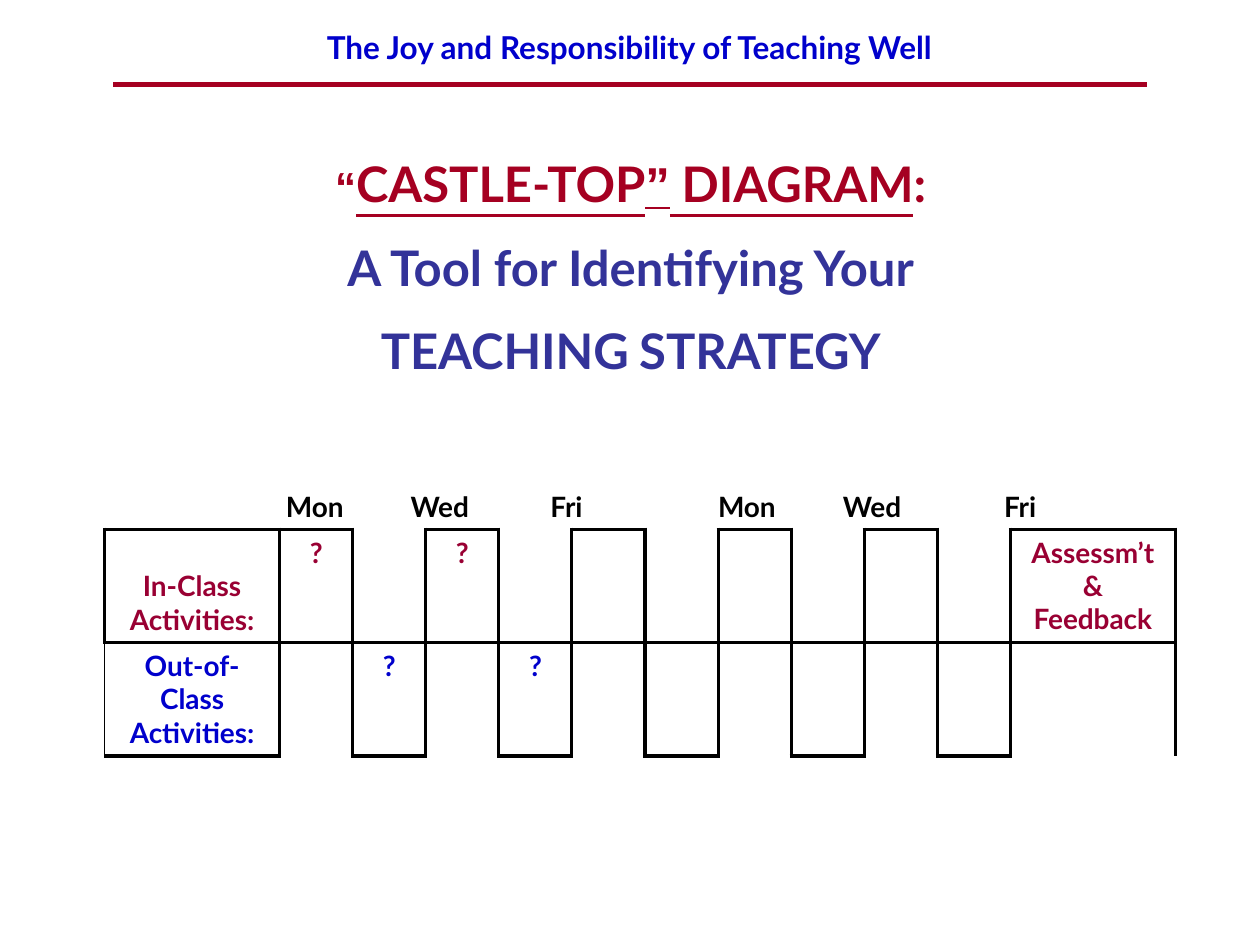
from dataclasses import dataclass

from lxml import etree
from pptx import Presentation
from pptx.dml.color import RGBColor
from pptx.enum.shapes import MSO_CONNECTOR
from pptx.enum.text import MSO_ANCHOR, MSO_AUTO_SIZE, PP_ALIGN
from pptx.oxml.ns import qn
from pptx.util import Emu, Inches, Pt

CENTER = PP_ALIGN.CENTER
TOP, MIDDLE, BOTTOM = MSO_ANCHOR.TOP, MSO_ANCHOR.MIDDLE, MSO_ANCHOR.BOTTOM
NO_AUTOFIT = MSO_AUTO_SIZE.NONE
STRAIGHT = MSO_CONNECTOR.STRAIGHT

LATO, ARIAL = "Lato", "Arial"
BLACK, CRIMSON, MAROON = "000000", "A50021", "990033"
BLUE, INDIGO = "0000CC", "333399"


@dataclass
class Piece:
    text: str
    color: str
    size: int = 28
    font: str = LATO
    underline: bool = False


@dataclass
class Activity:
    row: int
    column: int
    text: str
    color: str
    anchor: MSO_ANCHOR = TOP


HEADLINE = [
    [
        Piece("“", CRIMSON, 24, ARIAL),
        Piece("CASTLE-TOP", CRIMSON, underline=True),
        Piece("”", CRIMSON, font=ARIAL, underline=True),
        Piece(" DIAGRAM", CRIMSON, underline=True),
        Piece(":", CRIMSON),
    ],
    [Piece("A Tool for Identifying Your", INDIGO)],
    [Piece("TEACHING", INDIGO), Piece(" ", INDIGO, 24), Piece("STRATEGY", INDIGO)],
]
DAYS = ["Mon", "Wed", "Fri", "Mon", "Wed", "Fri"]
DAY_TABS = [0.99, 2.1, 3.43, 4.42, 5.7]
ACTIVITIES = [
    Activity(0, 0, "In-Class\nActivities:", MAROON, BOTTOM),
    Activity(0, 1, "?", MAROON),
    Activity(0, 3, "?", MAROON),
    Activity(0, 11, "Assessm’t & Feedback", MAROON),
    Activity(1, 0, "Out-of-Class\nActivities:", BLUE),
    Activity(1, 2, "?", BLUE),
    Activity(1, 4, "?", BLUE),
]
COLUMN_WIDTHS = [1.39] + [0.58] * 10 + [1.31]
ROW_HEIGHT = 0.9


def rgb(color: str) -> RGBColor:
    return RGBColor.from_string(color)


def format_font(font, color: str, size: int, name: str = LATO) -> None:
    font.name = name
    font.size = Pt(size)
    font.bold = True
    font.color.rgb = rgb(color)


def add_label(slide, left: float, top: float, width: float, height: float, text: str):
    frame = slide.shapes.add_textbox(
        Inches(left), Inches(top), Inches(width), Inches(height)
    ).text_frame
    frame.word_wrap = True
    frame.text = text
    return frame


def draw_banner(slide) -> None:
    motto = add_label(
        slide, 1.08, 0.17, 7.83, 0.4, "The Joy and Responsibility of Teaching Well"
    ).paragraphs[0]
    motto.alignment = CENTER
    format_font(motto.runs[0].font, BLUE, 18)
    rule = slide.shapes.add_connector(
        STRAIGHT, Inches(0.9), Inches(0.67), Inches(9.1), Inches(0.67)
    )
    rule.line.color.rgb = rgb(CRIMSON)
    rule.line.width = Pt(3)
    etree.SubElement(rule.element.spPr, qn("a:effectLst"))


def draw_headline(slide) -> None:
    title = slide.shapes.title
    title.left, title.top = Inches(1.67), Inches(1.17)
    title.width, title.height = Inches(6.67), Inches(1.97)
    frame = title.text_frame
    frame.word_wrap = True
    frame.auto_size = NO_AUTOFIT
    frame.vertical_anchor = TOP
    for index, pieces in enumerate(HEADLINE):
        paragraph = frame.paragraphs[0] if index == 0 else frame.add_paragraph()
        paragraph.alignment = CENTER
        paragraph.space_before = Pt(14 if index else 0)
        for piece in pieces:
            run = paragraph.add_run()
            run.text = piece.text
            format_font(run.font, piece.color, piece.size, piece.font)
            run.font.underline = piece.underline
    opening = frame.paragraphs[0]._p.get_or_add_pPr()
    opening.set("marL", "0")
    opening.set("indent", str(Inches(-0.18)))


def draw_days(slide) -> None:
    frame = add_label(slide, 2.17, 3.83, 6.92, 0.37, "\t".join(DAYS))
    frame.vertical_anchor = MIDDLE
    week = frame.paragraphs[0]
    tabs = etree.SubElement(week._p.get_or_add_pPr(), qn("a:tabLst"))
    for position in DAY_TABS:
        etree.SubElement(
            tabs, qn("a:tab"), pos=str(Inches(position)), algn="l"
        )
    for run in week.runs:
        format_font(run.font, BLACK, 16)


def set_border(cell, side: str, width: float) -> None:
    border = etree.SubElement(
        cell._tc.get_or_add_tcPr(), qn(f"a:{side}"), w=str(Pt(width))
    )
    if width:
        fill = etree.SubElement(border, qn("a:solidFill"))
        etree.SubElement(fill, qn("a:srgbClr"), val=BLACK)
    else:
        etree.SubElement(border, qn("a:noFill"))


def draw_castle(slide) -> None:
    last = len(COLUMN_WIDTHS) - 1
    castle = slide.shapes.add_table(
        2, last + 1, Inches(0.83), Inches(4.2), Inches(8.5), Inches(2 * ROW_HEIGHT)
    ).table
    castle.first_row = False
    castle.horz_banding = False
    for column, width in zip(castle.columns, COLUMN_WIDTHS):
        column.width = Inches(width)
    for row in range(2):
        castle.rows[row].height = Inches(ROW_HEIGHT)
        for column in range(last + 1):
            cell = castle.cell(row, column)
            in_class = column == 0 or column % 2 == 1
            out_of_class = column % 2 == 0
            set_border(cell, "lnL", 0.75 if (row, column) == (1, 0) else 2)
            set_border(cell, "lnR", 2)
            set_border(cell, "lnT", 2 if row == 1 or in_class else 0)
            set_border(cell, "lnB", 2 if row == 0 or out_of_class else 0)
            cell.fill.background()
    for activity in ACTIVITIES:
        cell = castle.cell(activity.row, activity.column)
        cell.text_frame.text = activity.text
        cell.vertical_anchor = activity.anchor
        for paragraph in cell.text_frame.paragraphs:
            paragraph.alignment = CENTER
            format_font(paragraph.runs[0].font, activity.color, 16)


def main() -> None:
    deck = Presentation()
    deck.slide_width, deck.slide_height = Emu(Inches(10)), Emu(Inches(7.5))
    slide = deck.slides.add_slide(deck.slide_layouts[5])
    draw_banner(slide)
    draw_days(slide)
    draw_castle(slide)
    draw_headline(slide)
    deck.save("out.pptx")


if __name__ == "__main__":
    main()
